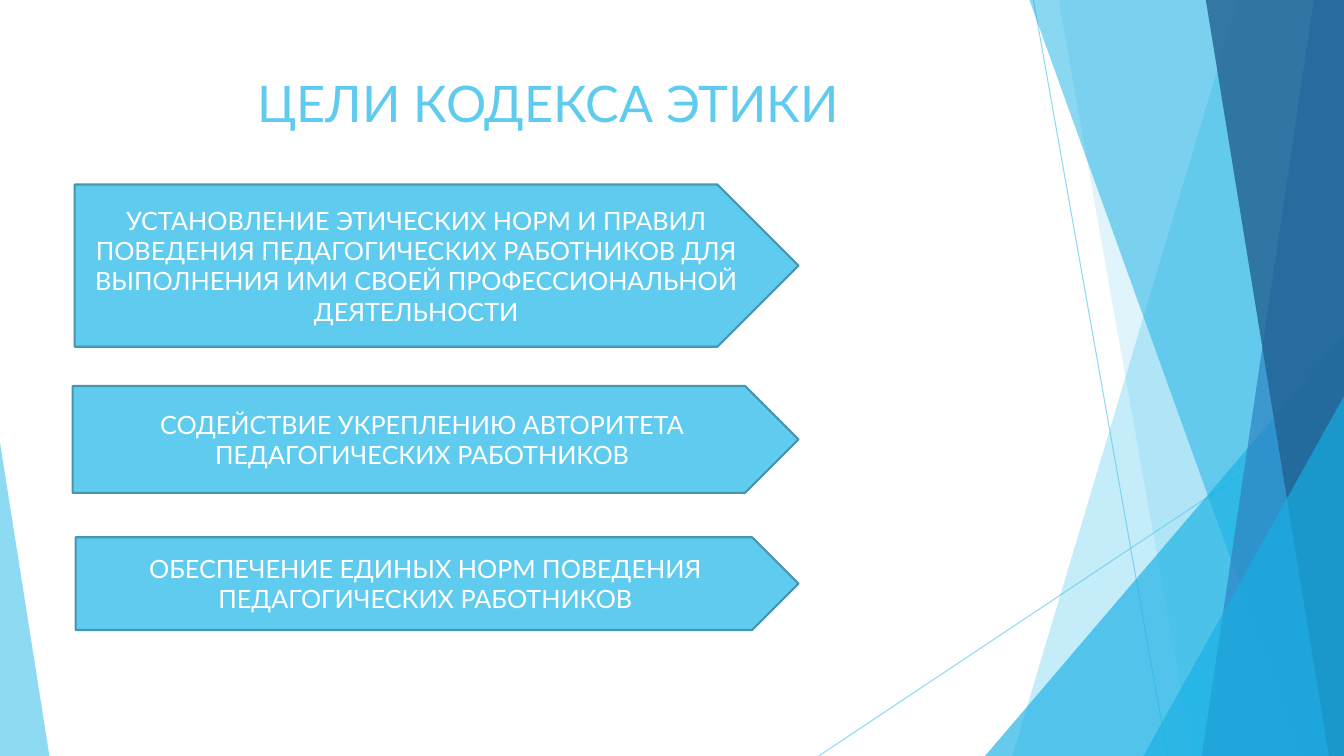
from lxml.etree import SubElement
from pptx import Presentation
from pptx.dml.color import RGBColor
from pptx.enum.shapes import MSO_CONNECTOR as CONNECTOR, MSO_SHAPE as SHAPE
from pptx.enum.text import MSO_ANCHOR as ANCHOR, PP_ALIGN as ALIGN
from pptx.oxml.ns import qn
from pptx.util import Inches, Pt

WIDTH, HEIGHT = 13.33, 7.5
FONT = "Lato"
SKY = RGBColor(0x5F, 0xCB, 0xEF)
CYAN = RGBColor(0x17, 0xB0, 0xE4)
BLUE = RGBColor(0x2E, 0x83, 0xC3)
NAVY = RGBColor(0x22, 0x62, 0x92)
OUTLINE = RGBColor(0x46, 0x96, 0xB1)
WHITE = RGBColor(0xFF, 0xFF, 0xFF)

THIN_LINES = [
    ((10.25, 0), (11.58, 7.5)),
    ((13.33, 4.03), (8.12, 7.5)),
]
BACK_BANDS = [
    (12.28, 10.04, SKY, 36),
    (10.5, 11.83, SKY, 20),
]
FRONT_BANDS = [
    (10.21, 12.91, CYAN, 50),
    (13.03, 11.92, BLUE, 70),
    (11.96, 13.18, NAVY, 80),
]
GOALS = [
    ((0.74, 1.83, 7.18, 1.61),
     "УСТАНОВЛЕНИЕ ЭТИЧЕСКИХ НОРМ И ПРАВИЛ ПОВЕДЕНИЯ ПЕДАГОГИЧЕСКИХ РАБОТНИКОВ "
     "ДЛЯ ВЫПОЛНЕНИЯ ИМИ СВОЕЙ ПРОФЕССИОНАЛЬНОЙ ДЕЯТЕЛЬНОСТИ"),
    ((0.72, 3.83, 7.2, 1.06),
     "СОДЕЙСТВИЕ УКРЕПЛЕНИЮ АВТОРИТЕТА ПЕДАГОГИЧЕСКИХ РАБОТНИКОВ"),
    ((0.75, 5.33, 7.17, 0.92),
     "ОБЕСПЕЧЕНИЕ ЕДИНЫХ НОРМ ПОВЕДЕНИЯ ПЕДАГОГИЧЕСКИХ РАБОТНИКОВ"),
]


def set_opacity(shape, percent):
    for color in shape.element.iter(qn("a:srgbClr")):
        SubElement(color, qn("a:alpha"), val=str(percent * 1000))


def style_facet(shape, color, opacity):
    shape.shadow.inherit = False
    shape.fill.solid()
    shape.fill.fore_color.rgb = color
    shape.line.fill.background()
    set_opacity(shape, opacity)


def add_thin_line(slide, start, end):
    line = slide.shapes.add_connector(
        CONNECTOR.STRAIGHT, *map(Inches, start + end))
    line.line.color.rgb = SKY
    line.line.width = Pt(0.75)
    set_opacity(line, 70)
    SubElement(line.element.spPr, qn("a:effectLst"))


def add_band(slide, box, top_x, bottom_x, color, opacity):
    left, top, width, height = box
    right, bottom = left + width, top + height
    corners = [(top_x, top), (right, top), (right, bottom), (bottom_x, bottom)]
    points = [(Inches(x), Inches(y)) for x, y in corners]
    builder = slide.shapes.build_freeform(*points[0])
    builder.add_line_segments(points[1:], close=True)
    style_facet(builder.convert_to_shape(), color, opacity)


def add_corner(slide, box, width, height, apex, color, opacity):
    left, top, box_width, box_height = box
    x = left + apex * (box_width - width)
    y = top + box_height - height
    triangle = slide.shapes.add_shape(
        SHAPE.ISOSCELES_TRIANGLE, *map(Inches, (x, y, width, height)))
    triangle.adjustments[0] = apex
    style_facet(triangle, color, opacity)


def add_backdrop(slide, box):
    for start, end in THIN_LINES:
        add_thin_line(slide, start, end)
    for band in BACK_BANDS:
        add_band(slide, box, *band)
    add_corner(slide, box, 3.56, 4.17, 1, CYAN, 66)
    for band in FRONT_BANDS:
        add_band(slide, box, *band)
    add_corner(slide, box, 1.99, 3.57, 1, CYAN, 66)
    add_corner(slide, box, 0.49, 3.11, 0, SKY, 70)


def write_text(shape, text, size, color, anchor):
    frame = shape.text_frame
    frame.word_wrap = True
    frame.vertical_anchor = anchor
    paragraph = frame.paragraphs[0]
    paragraph.text = text
    paragraph.alignment = ALIGN.CENTER
    paragraph.font.name = FONT
    paragraph.font.size = Pt(size)
    paragraph.font.color.rgb = color


def add_title(slide, box, text):
    title = slide.shapes.add_textbox(*map(Inches, box))
    write_text(title, text, 36, SKY, ANCHOR.TOP)


def add_goal(slide, box, text):
    arrow = slide.shapes.add_shape(SHAPE.PENTAGON, *map(Inches, box))
    arrow.shadow.inherit = False
    arrow.fill.solid()
    arrow.fill.fore_color.rgb = SKY
    arrow.line.color.rgb = OUTLINE
    arrow.line.width = Pt(1.5)
    write_text(arrow, text, 18, WHITE, ANCHOR.MIDDLE)


def main():
    presentation = Presentation()
    presentation.slide_width = Inches(WIDTH)
    presentation.slide_height = Inches(HEIGHT)
    slide = presentation.slides.add_slide(presentation.slide_layouts[6])
    add_backdrop(slide, (0, 0, WIDTH, HEIGHT))
    add_title(slide, (0.74, 0.67, 9.4, 1.44), "ЦЕЛИ КОДЕКСА ЭТИКИ")
    for box, text in GOALS:
        add_goal(slide, box, text)
    presentation.save("out.pptx")


if __name__ == "__main__":
    main()
